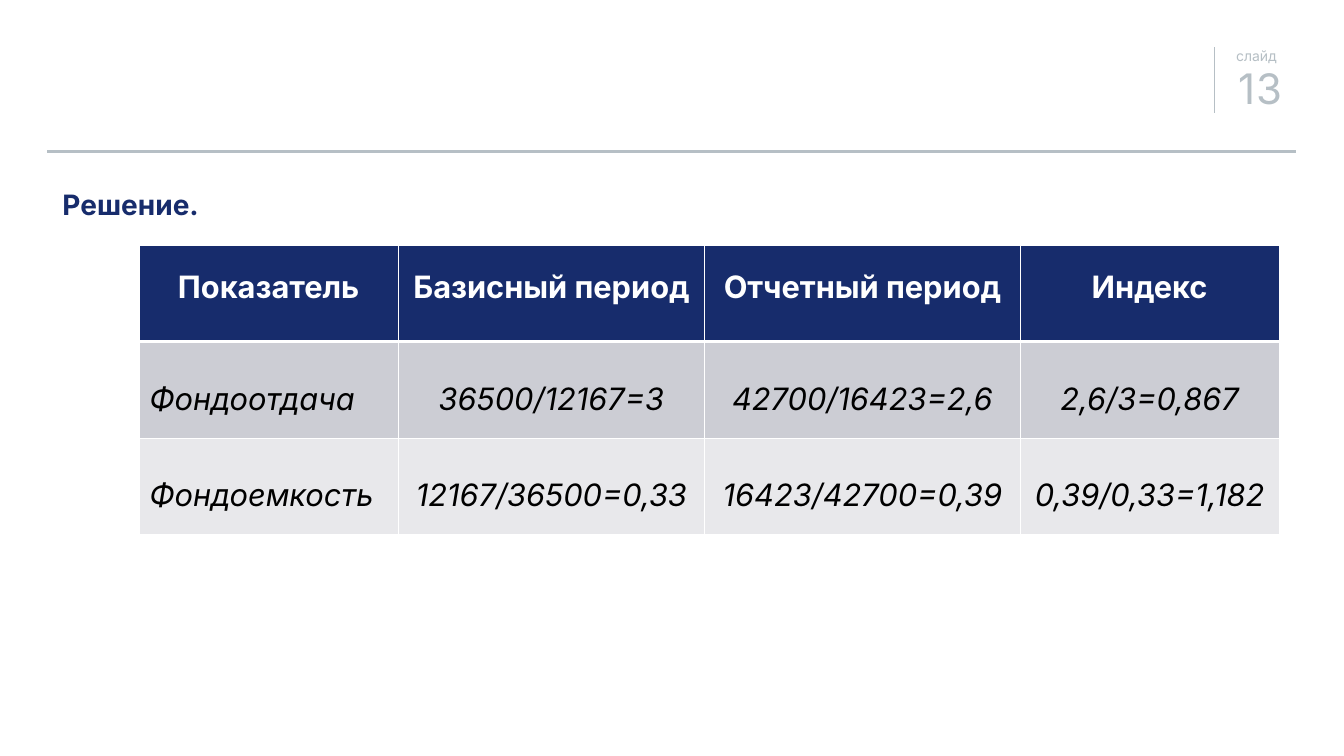
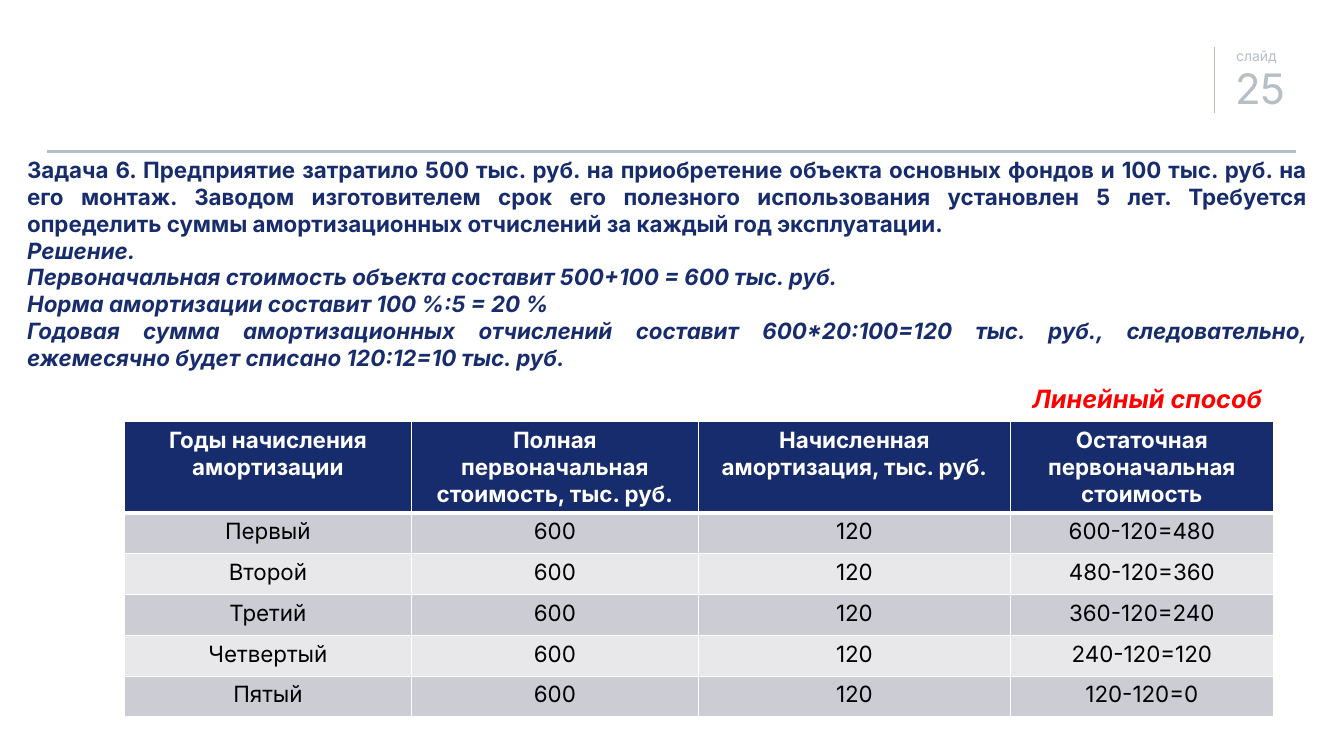
from dataclasses import dataclass

from lxml import etree
from pptx import Presentation
from pptx.dml.color import RGBColor
from pptx.enum import shapes, text
from pptx.oxml import ns
from pptx.util import Pt

ALIGN = text.PP_ALIGN
ANCHOR = text.MSO_ANCHOR


@dataclass(frozen=True)
class Theme:
    font: str = "Inter"
    navy: str = "172C6C"
    gray: str = "B6BFC5"
    red: str = "FF0000"
    white: str = "FFFFFF"
    black: str = "000000"
    bands: tuple = ("CCCDD4", "E8E8EB")
    label: int = 10
    body: int = 16
    caption: int = 18
    heading: int = 20
    table: int = 22
    number: int = 30
    border: int = 1
    header_border: int = 3


THEME = Theme()


def style(p, size, color, align=ALIGN.LEFT, bold=False, italic=False, spacing=1.0):
    p.alignment = align
    p.line_spacing = spacing
    p.space_before = p.space_after = Pt(0)
    f = p.font
    f.name, f.size, f.bold, f.italic = THEME.font, Pt(size), bold, italic
    f.color.rgb = RGBColor.from_string(color)


def add_text(slide, box, lines):
    """Add a wrapped text box; lines holds (text, style options) pairs."""
    tf = slide.shapes.add_textbox(*map(Pt, box)).text_frame
    tf.word_wrap = True
    for i, (line, options) in enumerate(lines):
        p = tf.add_paragraph() if i else tf.paragraphs[0]
        p.text = line
        style(p, **options)
    return tf


def add_rule(slide, x1, y1, x2, y2, width):
    line = slide.shapes.add_connector(
        shapes.MSO_CONNECTOR.STRAIGHT, *map(Pt, (x1, y1, x2, y2)))
    line.line.color.rgb = RGBColor.from_string(THEME.gray)
    line.line.width = Pt(width)
    etree.SubElement(line._element.spPr, ns.qn("a:effectLst"))


def add_slide(prs, number):
    """Add a slide with the shared rules and page number."""
    slide = prs.slides.add_slide(prs.slide_layouts[5])
    add_rule(slide, 867.6, 33.8, 867.6, 80.6, 1)
    add_rule(slide, 33.8, 108, 925.9, 108, 2)
    gray = dict(color=THEME.gray, align=ALIGN.CENTER)
    tf = add_text(slide, (867.6, 33.8, 59, 47.5), [
        ("слайд", dict(gray, size=THEME.label, spacing=Pt(10.6))),
        (str(number), dict(gray, size=THEME.number, spacing=Pt(34.5))),
    ])
    tf.margin_left = tf.margin_right = tf.margin_bottom = 0
    tf.margin_top = Pt(1.7)
    for p, indent in zip(tf.paragraphs, (0.7, 6.5)):
        p._p.get_or_add_pPr().set("marL", str(Pt(indent)))
    return slide


def set_title(slide, title, box, size, color, **options):
    sp = slide.shapes.title
    sp.left, sp.top, sp.width, sp.height = map(Pt, box)
    tf = sp.text_frame
    tf.text = title
    tf.word_wrap = True
    tf.auto_size = text.MSO_AUTO_SIZE.NONE
    tf.vertical_anchor = ANCHOR.TOP
    style(tf.paragraphs[0], size, color, bold=True, **options)


def set_borders(cell, top, bottom):
    tcPr = cell._tc.get_or_add_tcPr()
    widths = dict(L=THEME.border, R=THEME.border, T=top, B=bottom)
    for side, width in widths.items():
        ln = etree.SubElement(tcPr, ns.qn(f"a:ln{side}"), w=str(Pt(width)))
        fill = etree.SubElement(ln, ns.qn("a:solidFill"))
        etree.SubElement(fill, ns.qn("a:srgbClr"), val=THEME.white)


def add_table(slide, left, top, widths, heights, rows, size, spacing=1.0,
              italic=False, first_align=ALIGN.CENTER, anchor=ANCHOR.TOP):
    """Add a banded table; first_align and anchor apply below the header."""
    box = map(Pt, (left, top, sum(widths), sum(heights)))
    table = slide.shapes.add_table(len(rows), len(widths), *box).table
    for column, width in zip(table.columns, widths):
        column.width = Pt(width)
    for r, (row, height) in enumerate(zip(rows, heights)):
        table.rows[r].height = Pt(height)
        header = r == 0
        fill = THEME.navy if header else THEME.bands[(r - 1) % 2]
        above = THEME.header_border if r == 1 else THEME.border
        below = THEME.header_border if header else THEME.border
        for c, value in enumerate(row):
            cell = table.cell(r, c)
            cell.text = value
            cell.vertical_anchor = ANCHOR.TOP if header else anchor
            set_borders(cell, above, below)
            cell.fill.solid()
            cell.fill.fore_color.rgb = RGBColor.from_string(fill)
            style(cell.text_frame.paragraphs[0], size,
                  THEME.white if header else THEME.black,
                  align=first_align if c == 0 and not header else ALIGN.CENTER,
                  bold=header, italic=italic and not header, spacing=spacing)


def build_index_slide(prs):
    slide = add_slide(prs, 13)
    set_title(slide, "Решение.", (37.4, 123.1, 526, 35.3),
              THEME.heading, THEME.navy, spacing=1.3)
    rows = [
        ("Показатель", "Базисный период", "Отчетный период", "Индекс"),
        ("Фондоотдача", "36500/12167=3", "42700/16423=2,6", "2,6/3=0,867"),
        ("Фондоемкость", "12167/36500=0,33", "16423/42700=0,39", "0,39/0,33=1,182"),
    ]
    add_table(slide, 99.4, 175, (185, 219, 225.3, 185), [69] * len(rows), rows,
              THEME.table, spacing=1.5, italic=True,
              first_align=ALIGN.LEFT, anchor=ANCHOR.MIDDLE)


def build_depreciation_slide(prs):
    slide = add_slide(prs, 25)
    task = ("Задача 6. Предприятие затратило 500 тыс. руб. на приобретение объекта "
            "основных фондов и 100 тыс. руб. на его монтаж. Заводом изготовителем "
            "срок его полезного использования установлен 5 лет. Требуется определить "
            "суммы амортизационных отчислений за каждый год эксплуатации.")
    solution = [
        "Решение.",
        "Первоначальная стоимость объекта составит 500+100 = 600 тыс. руб.",
        "Норма амортизации составит 100 %:5 = 20 %",
        "Годовая сумма амортизационных отчислений составит 600*20:100=120 тыс. руб., "
        "следовательно, ежемесячно будет списано 120:12=10 тыс. руб.",
    ]
    navy = dict(size=THEME.body, color=THEME.navy, align=ALIGN.JUSTIFY, bold=True)
    add_text(slide, (12.3, 108, 928.8, 162.7),
             [(task, navy)] + [(line, dict(navy, italic=True)) for line in solution])
    set_title(slide, "Линейный способ", (730, 270, 184, 29),
              THEME.caption, THEME.red, italic=True)
    header = ("Годы начисления амортизации",
              "Полная первоначальная стоимость, тыс. руб.",
              "Начисленная амортизация, тыс. руб.",
              "Остаточная первоначальная стоимость")
    cost, charge = 600, 120
    years = ("Первый", "Второй", "Третий", "Четвертый", "Пятый")
    rows = [header]
    for i, year in enumerate(years):
        rest = cost - i * charge
        rows.append((year, str(cost), str(charge), f"{rest}-{charge}={rest - charge}"))
    add_table(slide, 88.9, 301, (205, 205, 223, 187.6),
              [65.2] + [29.2] * len(years), rows, THEME.body)


def main():
    prs = Presentation()
    prs.slide_width, prs.slide_height = Pt(960), Pt(540)
    build_index_slide(prs)
    build_depreciation_slide(prs)
    prs.save("out.pptx")


if __name__ == "__main__":
    main()
